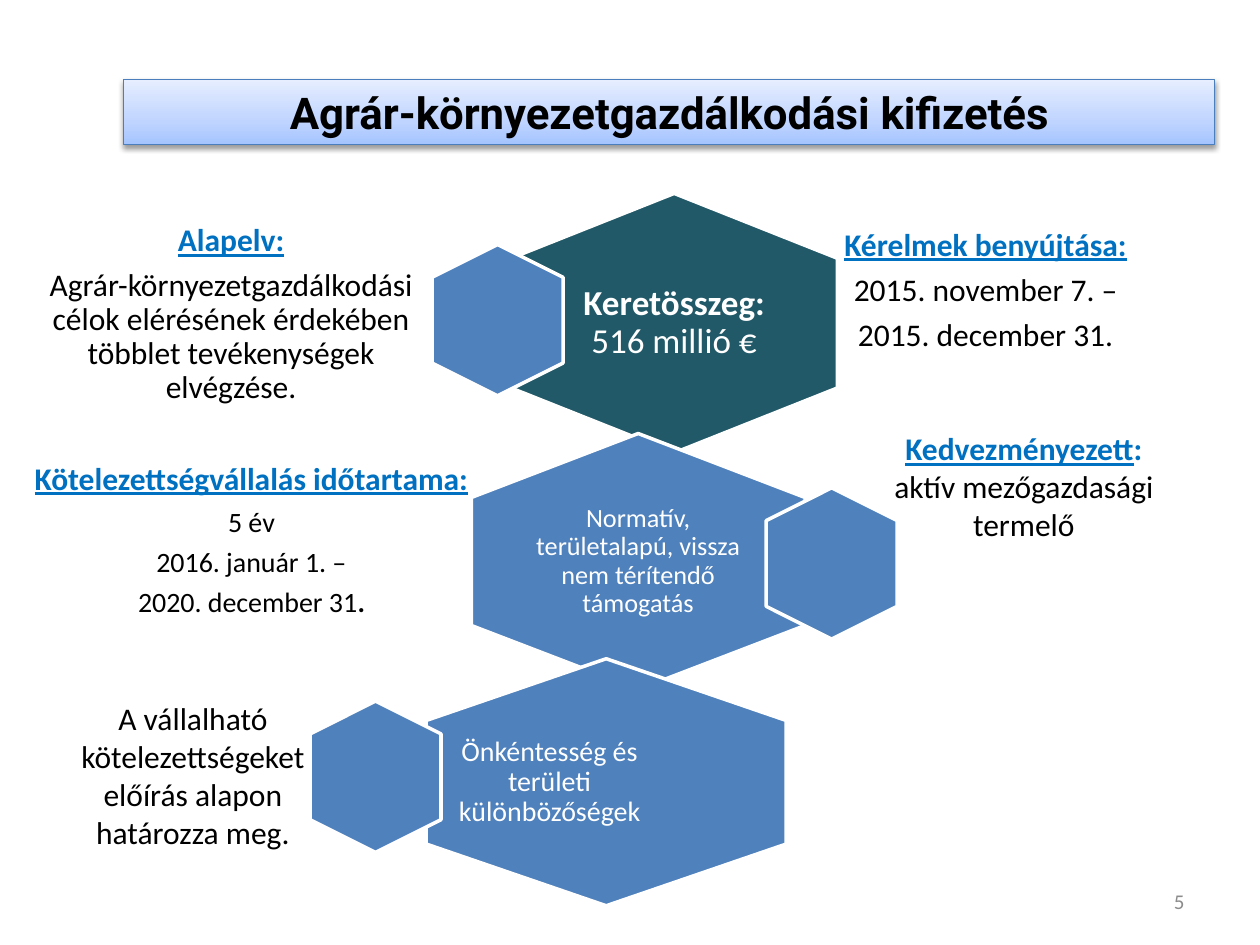
import copy

import pptx
import pptx.util
import pptx.dml.color
import pptx.enum.shapes
import pptx.enum.text
import pptx.oxml
import pptx.oxml.ns

Cm, Pt = pptx.util.Cm, pptx.util.Pt
ALIGN = pptx.enum.text.PP_ALIGN
ANCHOR = pptx.enum.text.MSO_ANCHOR

COLORS = {
    "blue": "4F81BD", "teal": "215968", "white": "FFFFFF", "black": "000000",
    "heading": "0070C0", "number": "8C8C8C", "border": "4B7EBC",
}
TITLE_STOPS = [(0, "A4C4FF"), (0.35, "BFD4FF"), (1, "E6EEFF")]
SMALL_HEX = (2.64, 3.05)


def rgb(value):
    return pptx.dml.color.RGBColor.from_string(COLORS.get(value, value))


def add_run(p, text, size, color="black", bold=False, underline=False, font="Calibri"):
    r = p.add_run()
    r.text = text
    r.font.name, r.font.size = font, Pt(size)
    r.font.bold, r.font.underline = bold, underline
    r.font.color.rgb = rgb(color)


def heading(text):
    return (text, 18, "heading", True, True)


def add_text(s, box, paragraphs, inset=None, anchor=ANCHOR.TOP,
             tight=False, align=ALIGN.CENTER):
    """Text box; tight gives 90 % lines and a gap of 35 % of the text size."""
    sp = s.shapes.add_textbox(*map(Cm, box))
    tf = sp.text_frame
    tf.word_wrap = True
    tf.vertical_anchor = anchor
    if inset is not None:
        tf.margin_left = tf.margin_right = tf.margin_top = tf.margin_bottom = Cm(inset)
    for i, runs in enumerate(paragraphs):
        p = tf.paragraphs[0] if i == 0 else tf.add_paragraph()
        p.alignment = align
        if tight:
            p.line_spacing = 0.9
            p.space_after = Pt(round(0.35 * runs[0][1], 1))
        for run in runs:
            add_run(p, *run)


def add_title(s, box, text):
    sp = s.shapes.title
    sp.left, sp.top, sp.width, sp.height = map(Cm, box)
    sp.line.color.rgb = rgb("border")
    sp.line.width = Pt(0.75)

    # Three-stop gradient, light at the top
    sp.fill.gradient()
    sp.fill.gradient_angle = 90
    stops = sp.fill._fill._gradFill.gsLst
    stops.append(copy.deepcopy(stops[0]))
    for stop, (position, color) in zip(sp.fill.gradient_stops, TITLE_STOPS):
        stop.position = position
        stop.color.rgb = rgb(color)

    # Soft shadow below
    sp._element.spPr.append(pptx.oxml.parse_xml(
        f'<a:effectLst {pptx.oxml.ns.nsdecls("a")}>'
        '<a:outerShdw blurRad="40000" dist="20000" dir="5400000" rotWithShape="0">'
        '<a:srgbClr val="000000"><a:alpha val="38000"/></a:srgbClr>'
        '</a:outerShdw></a:effectLst>'))

    tf = sp.text_frame
    tf.word_wrap = True
    tf.auto_size = pptx.enum.text.MSO_AUTO_SIZE.NONE
    tf.vertical_anchor = ANCHOR.TOP
    p = tf.paragraphs[0]
    p.alignment = ALIGN.CENTER
    add_run(p, text, 25, bold=True, font="Roboto")


def add_hexagon(s, center, size, color):
    """Hexagon standing on a point; size is its width and height as seen."""
    (x, y), (w, h) = center, size
    sp = s.shapes.add_shape(pptx.enum.shapes.MSO_SHAPE.HEXAGON,
                            Cm(x - h / 2), Cm(y - w / 2), Cm(h), Cm(w))
    sp.rotation = 90
    sp.adjustments[0], sp.adjustments[1] = 0.25, 1.1547
    sp.shadow.inherit = False
    sp.fill.solid()
    sp.fill.fore_color.rgb = rgb(color)
    sp.line.color.rgb = rgb("white")
    sp.line.width = Pt(2)


def add_cluster(s, box, color, runs, text_size, small_offset, text_dx=0, inset=0.18):
    """Large hexagon filling the box, its text and a small hexagon beside it."""
    left, top, w, h = box
    x, y = left + w / 2, top + h / 2
    add_hexagon(s, (x, y), (w, h), color)
    tw, th = text_size
    add_text(s, (x + text_dx - tw / 2, y - th / 2, tw, th), [runs],
             inset, ANCHOR.MIDDLE, tight=True)
    dx, dy = small_offset
    add_hexagon(s, (x + dx, y + dy), SMALL_HEX, "blue")


def add_note(s, box, paragraphs):
    add_text(s, box, paragraphs, 0.18, ANCHOR.MIDDLE, tight=True)


def main():
    prs = pptx.Presentation()
    prs.slide_width, prs.slide_height = Cm(25.4), Cm(19.05)
    s = prs.slides.add_slide(prs.slide_layouts[5])

    add_title(s, (2.49, 1.6, 22, 1.32), "Agrár-környezetgazdálkodási kifizetés")

    # Hexagon clusters, top to bottom
    add_cluster(s, (10.3, 3.9, 6.58, 5.23), "teal",
                [("Keretösszeg:", 20, "white", True), (" 516 millió €", 20, "white")],
                (4.39, 3.48), (-3.56, -0.06), inset=0.2)
    add_cluster(s, (9.5, 8.74, 6.73, 5.16), "blue",
                [("Normatív, területalapú, vissza nem térítendő támogatás", 15, "white")],
                (4.47, 3.43), (3.9, 0.04), inset=0.15)
    add_cluster(s, (8.59, 13.28, 7.26, 4.98), "blue",
                [("Önkéntesség és területi különbözőségek", 16, "white")],
                (4.83, 3.33), (-4.65, -0.11), text_dx=-1.14)

    # Notes around the clusters
    add_note(s, (0.43, 3.89, 8.46, 4.93), [
        [heading("Alapelv:")],
        [("Agrár-környezetgazdálkodási célok elérésének érdekében "
          "többlet tevékenységek elvégzése.", 18)]])
    add_note(s, (15.44, 4.14, 8.86, 3.45), [
        [heading("Kérelmek benyújtása:")],
        [("2015. november 7. –", 18)],
        [("2015. december 31.", 18)]])
    add_note(s, (0.51, 8.71, 9.12, 4.39), [
        [heading("Kötelezettségvállalás időtartama:")],
        [("5 év", 16)],
        [("2016. január 1. –", 16)],
        [("2020. december 31", 16), (".", 16, "black", True)]])
    add_text(s, (0.79, 13.97, 6.2, 3.33), [
        [("A vállalható kötelezettségeket előírás alapon határozza meg.", 18)]])
    add_text(s, (16.74, 8.53, 7.8, 2.57), [
        [heading("Kedvezményezett"), (":", 18, "heading", True)],
        [("aktív mezőgazdasági termelő", 18)]])

    # Slide number
    add_text(s, (18.21, 17.65, 5.92, 1.02), [[("5", 12, "number")]],
             anchor=ANCHOR.MIDDLE, align=ALIGN.RIGHT)

    prs.save("out.pptx")


if __name__ == "__main__":
    main()
